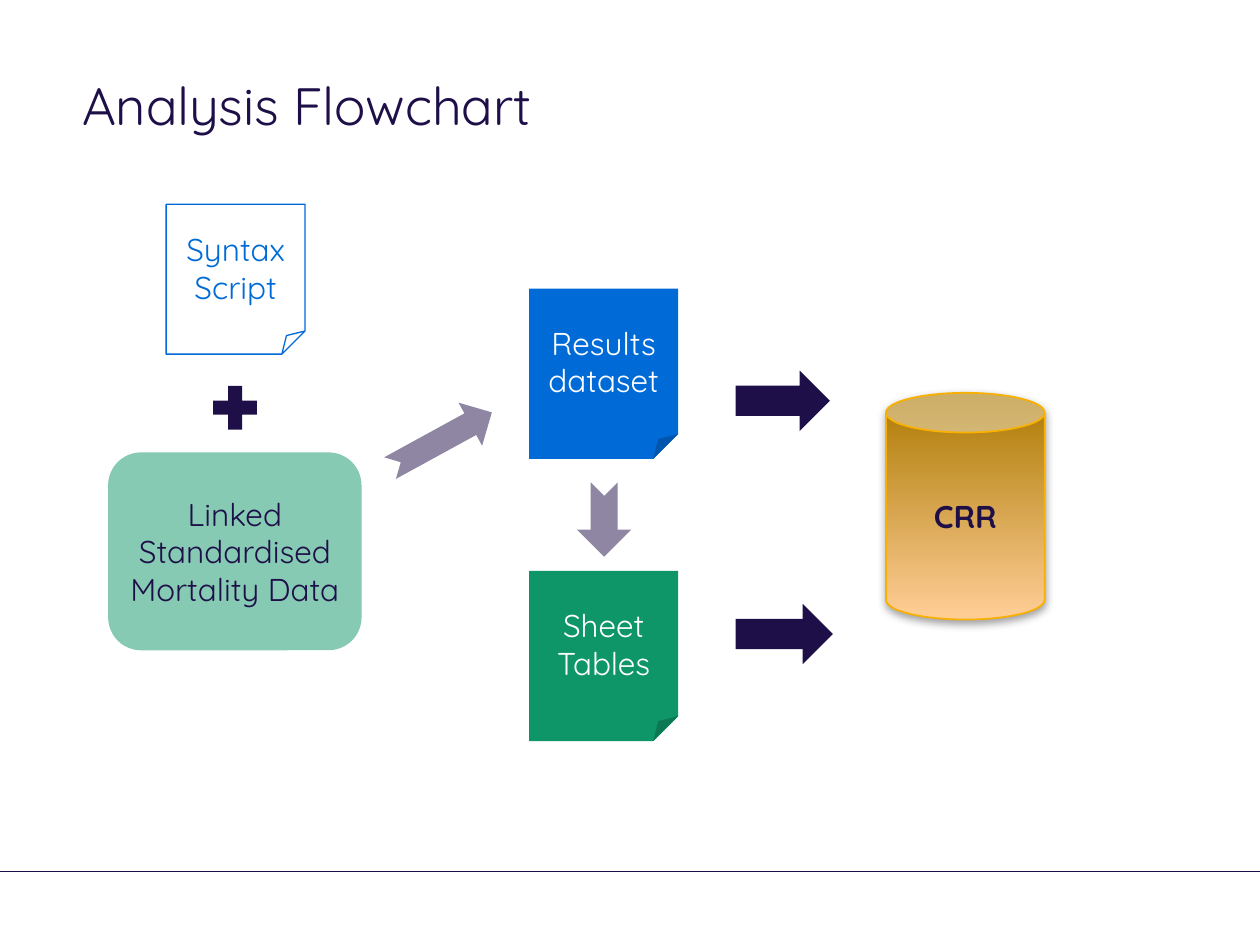
from dataclasses import dataclass

from lxml.etree import SubElement
from pptx import Presentation
from pptx.dml.color import RGBColor
from pptx.enum.shapes import MSO_CONNECTOR, MSO_SHAPE
from pptx.enum.text import MSO_ANCHOR, MSO_AUTO_SIZE, PP_ALIGN
from pptx.oxml.ns import qn
from pptx.util import Cm, Pt


@dataclass(frozen=True)
class Theme:
    font: str = "Quicksand"
    title_size: int = 30
    body_size: int = 18
    navy: str = "1E0F49"
    rule: str = "1D0D49"
    blue: str = "006BD7"
    green: str = "0E9669"
    white: str = "FFFFFF"
    gold: str = "F9B000"
    can_top: str = "AB7900"
    can_bottom: str = "FFCE97"
    shadow: str = "808080"


THEME = Theme()


def rgb(color):
    return RGBColor.from_string(color)


def add_alpha(color_element, percent):
    SubElement(color_element, qn("a:alpha"), val=str(percent * 1000))


def set_text(sp, text, size=THEME.body_size, color=THEME.navy, bold=False,
             align=PP_ALIGN.CENTER, anchor=MSO_ANCHOR.MIDDLE):
    tf = sp.text_frame
    tf.word_wrap = True
    tf.auto_size = MSO_AUTO_SIZE.NONE
    tf.vertical_anchor = anchor
    p = tf.paragraphs[0]
    p.alignment = align
    r = p.add_run()
    r.text = text
    r.font.name = THEME.font
    r.font.size = Pt(size)
    r.font.bold = bold
    r.font.color.rgb = rgb(color)


def add_title(s, text):
    sp = s.shapes.title
    sp.left, sp.top, sp.width, sp.height = Cm(1.4), Cm(1.35), Cm(20.98), Cm(3.1)
    set_text(sp, text, size=THEME.title_size, align=PP_ALIGN.LEFT,
             anchor=MSO_ANCHOR.TOP)


def add_rule(s, y, width):
    line = s.shapes.add_connector(MSO_CONNECTOR.STRAIGHT, 0, Cm(y), width, Cm(y))
    line.line.color.rgb = rgb(THEME.rule)
    line.line.width = Pt(0.25)
    SubElement(line._element.spPr, qn("a:effectLst"))


def add_node(s, kind, left, top, width, height, fill=None, opacity=100,
             line=None, line_width=0.75, rotation=0):
    sp = s.shapes.add_shape(kind, Cm(left), Cm(top), Cm(width), Cm(height))
    sp.shadow.inherit = False
    sp.rotation = rotation
    if fill:
        sp.fill.solid()
        sp.fill.fore_color.rgb = rgb(fill)
        if opacity < 100:
            add_alpha(sp._element.spPr.find(qn("a:solidFill"))[0], opacity)
    else:
        sp.fill.background()
    if line:
        sp.line.color.rgb = rgb(line)
        sp.line.width = Pt(line_width)
    else:
        sp.line.fill.background()
    return sp


def add_database(s, text, left, top, width, height):
    """Draw a cylinder with a vertical gradient and a soft shadow below."""
    sp = add_node(s, MSO_SHAPE.CAN, left, top, width, height,
                  line=THEME.gold, line_width=1)
    sp.fill.gradient()
    sp.fill.gradient_angle = 270
    for stop, color in zip(sp.fill.gradient_stops,
                           (THEME.can_top, THEME.can_bottom)):
        stop.color.rgb = rgb(color)
    effects = sp._element.spPr.find(qn("a:effectLst"))
    shadow = SubElement(effects, qn("a:outerShdw"), blurRad=str(Pt(5)),
                        dist=str(Pt(2)), dir="5400000", rotWithShape="0")
    add_alpha(SubElement(shadow, qn("a:srgbClr"), val=THEME.shadow), 75)
    set_text(sp, text, bold=True)


def add_documents(s):
    documents = (
        ("Syntax Script", (3.35, 4.12, 2.8, 3.02), None, THEME.blue, THEME.blue),
        ("Results dataset", (10.67, 5.82, 3, 3.43), THEME.blue, None, THEME.white),
        ("Sheet Tables", (10.67, 11.51, 3, 3.43), THEME.green, None, THEME.white),
    )
    for text, box, fill, line, color in documents:
        sp = add_node(s, MSO_SHAPE.FOLDED_CORNER, *box, fill=fill, line=line)
        set_text(sp, text, color=color)


def add_linked_data(s):
    add_node(s, MSO_SHAPE.MATH_PLUS, 4.14, 7.62, 1.2, 1.2, fill=THEME.navy)
    sp = add_node(s, MSO_SHAPE.ROUNDED_RECTANGLE, 2.18, 9.12, 5.11, 3.99,
                  fill=THEME.green, opacity=50)
    set_text(sp, "Linked Standardised Mortality Data")


def add_arrows(s):
    for box, rotation in (((7.72, 8.38, 2.34, 0.99), 331.3),
                          ((11.43, 9.93, 1.5, 1.09), 90)):
        add_node(s, MSO_SHAPE.NOTCHED_RIGHT_ARROW, *box, fill=THEME.navy,
                 opacity=50, rotation=rotation)
    for top, width in ((7.47, 1.9), (12.17, 1.96)):
        add_node(s, MSO_SHAPE.RIGHT_ARROW, 14.83, top, width, 1.22,
                 fill=THEME.navy)


def main():
    prs = Presentation()
    prs.slide_width, prs.slide_height = Cm(25.4), Cm(19.05)
    s = prs.slides.add_slide(prs.slide_layouts[5])
    add_rule(s, 17.57, prs.slide_width)
    add_title(s, "Analysis Flowchart")
    add_documents(s)
    add_linked_data(s)
    add_arrows(s)
    add_database(s, "CRR", 17.86, 7.92, 3.2, 4.57)
    prs.save("out.pptx")


if __name__ == "__main__":
    main()
